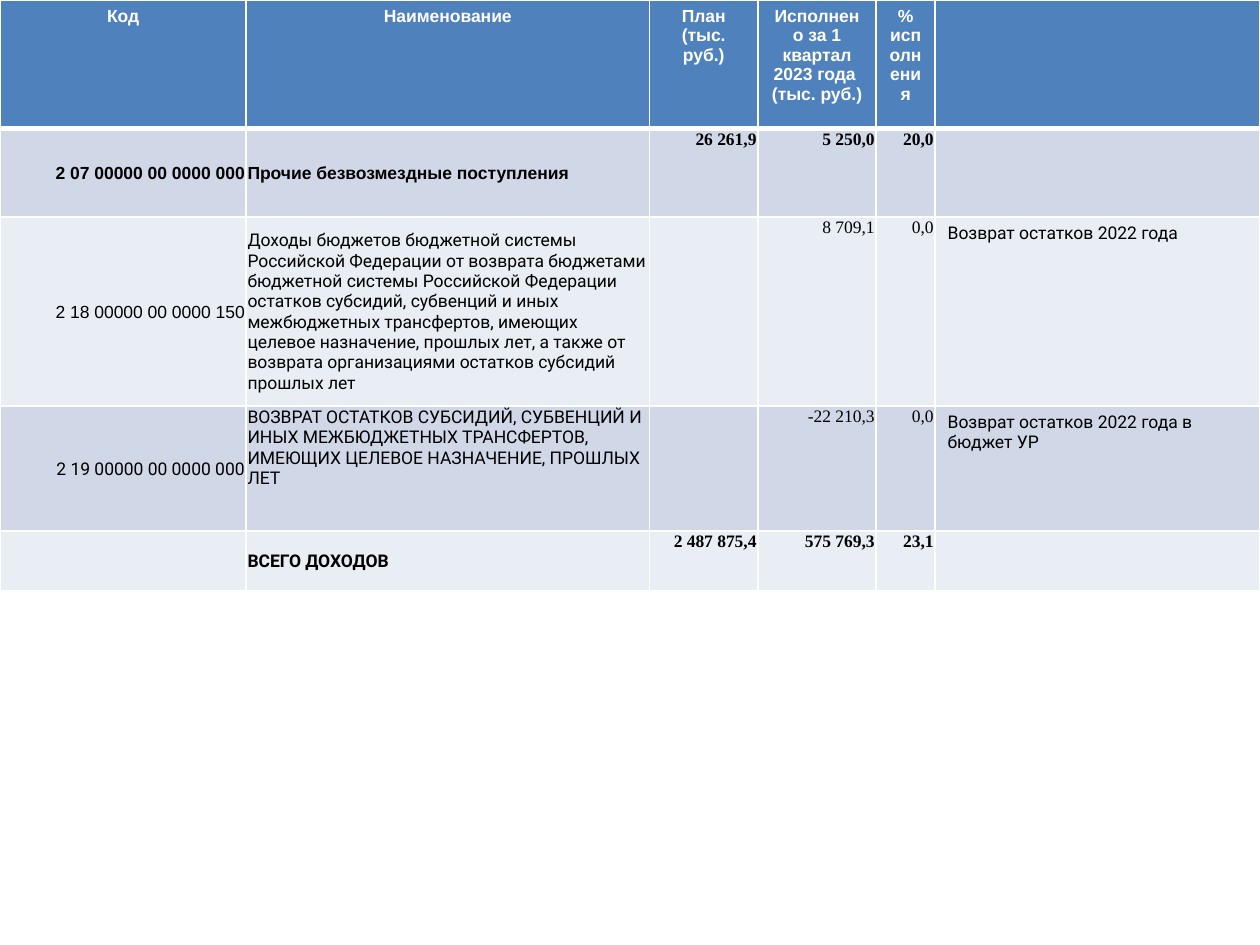
import dataclasses

import lxml.etree
import pptx
import pptx.dml.color
import pptx.enum.text
import pptx.oxml.ns
import pptx.util

Cm = pptx.util.Cm
Align = pptx.enum.text.PP_ALIGN
Anchor = pptx.enum.text.MSO_ANCHOR


@dataclasses.dataclass(frozen=True)
class Theme:
    header: str = "4F81BD"
    bands: tuple = ("D0D8E8", "E9EDF4")
    white: str = "FFFFFF"
    black: str = "000000"
    sans: str = "Arial"
    text: str = "Roboto"
    number: str = "Times New Roman"
    size: int = 10
    border: int = 1
    header_border: int = 3


theme = Theme()


def write_text(cell, text, *, font, color=theme.black, bold=False,
               align=Align.LEFT, anchor=Anchor.TOP, tight=True):
    """Fill a cell, one paragraph per line; tight cells have almost no margins."""
    cell.vertical_anchor = anchor
    if tight:
        cell.margin_left = cell.margin_right = cell.margin_top = Cm(0.03)
        cell.margin_bottom = Cm(0)
    cell.text_frame.text = text
    for paragraph in cell.text_frame.paragraphs:
        paragraph.alignment = align
        for run in paragraph.runs:
            run.font.name = font
            run.font.size = pptx.util.Pt(theme.size)
            run.font.bold = bold
            run.font.color.rgb = pptx.dml.color.RGBColor.from_string(color)


def style_cell(cell, fill, bottom_border):
    """Draw white borders, then the fill, in the order the file format requires."""
    qn = pptx.oxml.ns.qn
    properties = cell._tc.get_or_add_tcPr()
    for side in "LRTB":
        width = bottom_border if side == "B" else theme.border
        line = lxml.etree.SubElement(properties, qn(f"a:ln{side}"), w=str(pptx.util.Pt(width)))
        solid = lxml.etree.SubElement(line, qn("a:solidFill"))
        lxml.etree.SubElement(solid, qn("a:srgbClr"), val=theme.white)
    cell.fill.solid()
    cell.fill.fore_color.rgb = pptx.dml.color.RGBColor.from_string(fill)


headers = ["Код", "Наименование", "План\n(тыс. руб.)",
           "Исполнено за 1 квартал 2023 года \n(тыс. руб.)", "% исполнения", ""]
records = [
    ["2 07 00000 00 0000 000", "Прочие безвозмездные поступления",
     "26 261,9", "5 250,0", "20,0", ""],
    ["2 18 00000 00 0000 150",
     "Доходы бюджетов бюджетной системы Российской Федерации от возврата бюджетами "
     "бюджетной системы Российской Федерации остатков субсидий, субвенций и иных "
     "межбюджетных трансфертов, имеющих целевое назначение, прошлых лет, а также от "
     "возврата организациями остатков субсидий прошлых лет",
     "", "8 709,1", "0,0", "Возврат остатков 2022 года"],
    ["2 19 00000 00 0000 000",
     "ВОЗВРАТ ОСТАТКОВ СУБСИДИЙ, СУБВЕНЦИЙ И ИНЫХ МЕЖБЮДЖЕТНЫХ ТРАНСФЕРТОВ, "
     "ИМЕЮЩИХ ЦЕЛЕВОЕ НАЗНАЧЕНИЕ, ПРОШЛЫХ ЛЕТ",
     "", "-22 210,3", "0,0", "Возврат остатков 2022 года в бюджет УР"],
    ["", "ВСЕГО ДОХОДОВ", "2 487 875,4", "575 769,3", "23,1", ""],
]
code_fonts = [theme.sans, theme.sans, theme.text, theme.text]
name_fonts = [theme.sans, theme.text, theme.text, theme.text]
name_anchors = [Anchor.MIDDLE, Anchor.MIDDLE, Anchor.TOP, Anchor.MIDDLE]
bold_rows = [True, False, False, True]
column_widths = [4.96, 8.13, 2.19, 2.38, 1.19, 6.55]
row_heights = [2.59, 1.78, 3.81, 2.52, 1.2]

presentation = pptx.Presentation()
presentation.slide_width = Cm(25.4)
presentation.slide_height = Cm(19.05)
slide = presentation.slides.add_slide(presentation.slide_layouts[6])

table = slide.shapes.add_table(
    len(row_heights), len(column_widths), Cm(0), Cm(0),
    Cm(sum(column_widths)), Cm(sum(row_heights))).table
for column, width in zip(table.columns, column_widths):
    column.width = Cm(width)
for row, height in zip(table.rows, row_heights):
    row.height = Cm(height)

for cell, text in zip(table.rows[0].cells, headers):
    style_cell(cell, theme.header, theme.header_border)
    if text:
        write_text(cell, text, font=theme.sans, color=theme.white, bold=True,
                   align=Align.CENTER, tight=False)

for index, record in enumerate(records):
    number = {"font": theme.number, "align": Align.RIGHT}
    formats = [
        {"font": code_fonts[index], "align": Align.RIGHT, "anchor": Anchor.MIDDLE},
        {"font": name_fonts[index], "anchor": name_anchors[index]},
        number, number, number,
        {"font": theme.text, "tight": False},
    ]
    for cell, text, text_format in zip(table.rows[index + 1].cells, record, formats):
        style_cell(cell, theme.bands[index % 2], theme.border)
        if text:
            write_text(cell, text, bold=bold_rows[index], **text_format)

presentation.save("out.pptx")
